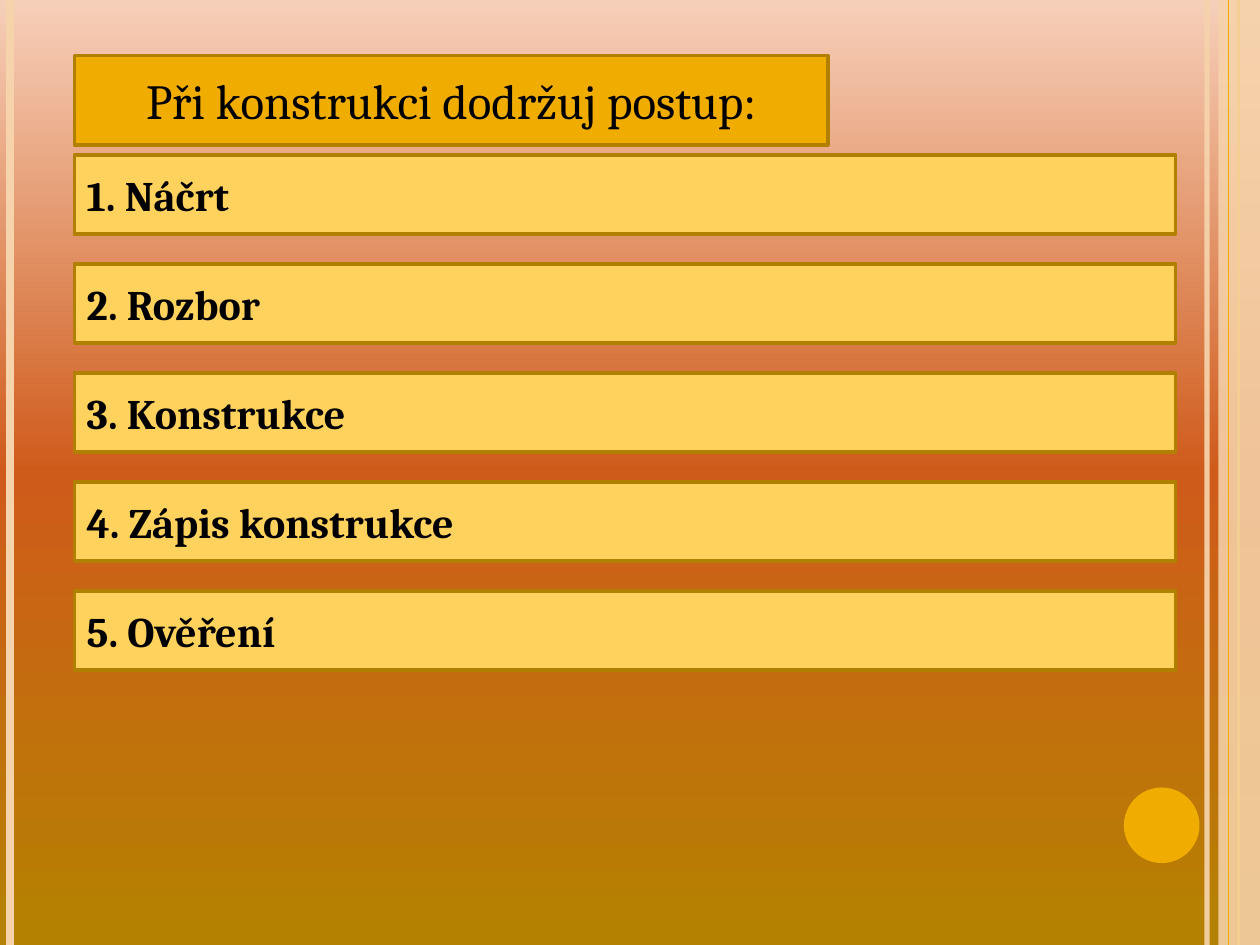
from lxml import etree
from pptx import Presentation
from pptx.dml.color import RGBColor
from pptx.enum.shapes import MSO_CONNECTOR, MSO_SHAPE
from pptx.enum.text import MSO_ANCHOR, MSO_AUTO_SIZE, PP_ALIGN
from pptx.oxml.ns import qn
from pptx.util import Inches, Pt

STRAIGHT = MSO_CONNECTOR.STRAIGHT
RECTANGLE, OVAL = MSO_SHAPE.RECTANGLE, MSO_SHAPE.OVAL
MIDDLE = MSO_ANCHOR.MIDDLE
LEFT, CENTER = PP_ALIGN.LEFT, PP_ALIGN.CENTER
NO_AUTOFIT = MSO_AUTO_SIZE.NONE

WIDTH, HEIGHT = 10, 7.5
MARGIN = 0.59
FIRST_STEP_TOP, STEP_PITCH = 1.23, 0.865
STEP_WIDTH, STEP_HEIGHT = 8.74, 0.63
FONT = "Cambria"
COLORS = {
    "sky": "F6CFB9", "ember": "CF5B1B", "earth": "B48200",
    "sand": "F6D3AB", "gold": "F0AD00", "step": "FFD25D",
    "border": "B28000", "text": "000000",
}
BACKGROUND_STOPS = [(0, "sky"), (50, "ember"), (100, "earth")]
STEPS = ["Náčrt", "Rozbor", "Konstrukce", "Zápis konstrukce", "Ověření"]


def rgb(name):
    return RGBColor.from_string(COLORS[name])


def set_opacity(element, percent):
    color = element.find(".//" + qn("a:srgbClr"))
    etree.SubElement(color, qn("a:alpha"), val=str(percent * 1000))


def paint_background(slide):
    fill = slide.background.fill
    fill.gradient()
    fill.gradient_angle = 270
    stops = slide.element.find(".//" + qn("a:gsLst"))
    for stop in list(stops):
        stops.remove(stop)
    for position, color in BACKGROUND_STOPS:
        stop = etree.SubElement(stops, qn("a:gs"), pos=str(position * 1000))
        etree.SubElement(stop, qn("a:srgbClr"), val=COLORS[color])


def add_stripe(slide, x, color, weight, opacity=100):
    stripe = slide.shapes.add_connector(
        STRAIGHT, Inches(x), 0, Inches(x), Inches(HEIGHT))
    stripe.line.color.rgb = rgb(color)
    stripe.line.width = Pt(weight)
    properties = stripe.element.spPr
    if opacity < 100:
        set_opacity(properties, opacity)
    etree.SubElement(properties, qn("a:effectLst"))


def add_ornament(slide, kind, left, top, width, height, color):
    ornament = slide.shapes.add_shape(
        kind, Inches(left), Inches(top), Inches(width), Inches(height))
    ornament.shadow.inherit = False
    ornament.fill.solid()
    ornament.fill.fore_color.rgb = rgb(color)
    ornament.line.fill.background()
    return ornament


def format_banner(banner, text, color, size, bold, alignment):
    banner.fill.solid()
    banner.fill.fore_color.rgb = rgb(color)
    banner.line.color.rgb = rgb("border")
    banner.line.width = Pt(2)
    frame = banner.text_frame
    frame.text = text
    frame.word_wrap = True
    frame.auto_size = NO_AUTOFIT
    frame.vertical_anchor = MIDDLE
    paragraph = frame.paragraphs[0]
    paragraph.alignment = alignment
    font = paragraph.font
    font.name, font.size, font.bold = FONT, Pt(size), bold
    font.color.rgb = rgb("text")


def add_title(slide, text):
    title = slide.shapes.title
    title.left, title.top = Inches(MARGIN), Inches(0.44)
    title.width, title.height = Inches(5.98), Inches(0.71)
    format_banner(title, text, "gold", 28, False, CENTER)


def add_step(slide, index, text):
    top = FIRST_STEP_TOP + index * STEP_PITCH
    step = slide.shapes.add_shape(
        RECTANGLE, Inches(MARGIN), Inches(top),
        Inches(STEP_WIDTH), Inches(STEP_HEIGHT))
    step.shadow.inherit = False
    format_banner(step, f"{index + 1}. {text}", "step", 24, True, LEFT)


def main():
    presentation = Presentation()
    presentation.slide_width = Inches(WIDTH)
    presentation.slide_height = Inches(HEIGHT)
    slide = presentation.slides.add_slide(presentation.slide_layouts[5])
    paint_background(slide)

    # Edge stripes, translucent band and corner dot
    add_stripe(slide, 9.58, "sand", 3, opacity=93)
    add_stripe(slide, 0.08, "sand", 4.5)
    add_stripe(slide, 9.83, "gold", 1.5)
    band = add_ornament(slide, RECTANGLE, 9.67, 0, 0.33, HEIGHT, "sand")
    set_opacity(band.element.spPr, 87)
    add_stripe(slide, 9.75, "gold", 0.75)
    add_ornament(slide, OVAL, 8.92, 6.25, 0.6, 0.6, "gold")

    # Heading and the numbered steps
    add_title(slide, "Při konstrukci dodržuj postup:")
    for index, text in enumerate(STEPS):
        add_step(slide, index, text)

    presentation.save("out.pptx")


if __name__ == "__main__":
    main()
